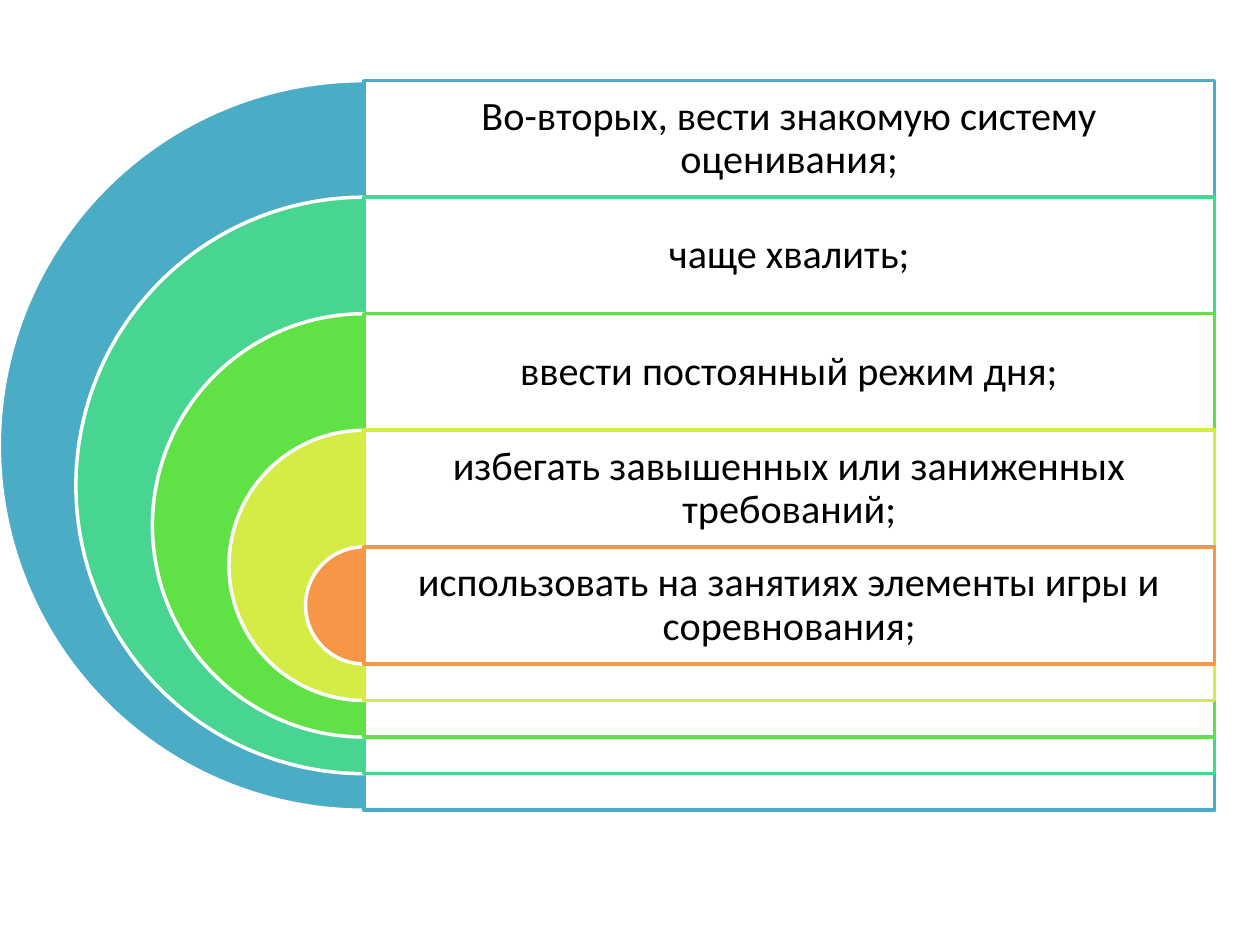
"""Build a slide of nested half discs, each with a framed recommendation."""
from dataclasses import dataclass

from lxml import etree
from pptx import Presentation
from pptx.dml.color import RGBColor
from pptx.enum import shapes, text
from pptx.oxml.ns import qn
from pptx.util import Inches, Pt


@dataclass(frozen=True)
class Theme:
    font: str = "Calibri"
    text_size: float = 23
    line_width: float = 2
    line_spacing: float = 0.9
    text_color: str = "000000"
    paper: str = "FFFFFF"
    frame_alpha: int = 90


@dataclass(frozen=True)
class Layer:
    caption: str
    color: str


@dataclass(frozen=True)
class Box:
    left: float
    top: float
    width: float
    height: float

    def lengths(self) -> tuple:
        return tuple(map(Inches, (self.left, self.top, self.width, self.height)))


THEME = Theme()
LAYERS = (
    Layer("Во-вторых, вести знакомую систему оценивания;", "4BACC6"),
    Layer("чаще хвалить;", "48D491"),
    Layer("ввести постоянный режим дня;", "60E146"),
    Layer("избегать завышенных или заниженных требований;", "D5EC46"),
    Layer("использовать на занятиях элементы игры и соревнования;", "F79646"),
)
CENTER = 2.89
TOP = 0.64
FRAME_WIDTH = 6.75
OUTER_DIAMETER = 5.79
ROW_HEIGHT = 0.93
DIAMETER_STEP = (OUTER_DIAMETER - ROW_HEIGHT) / (len(LAYERS) - 1)


def add_filled_shape(slide, kind, box: Box, fill: str, line: str):
    shape = slide.shapes.add_shape(kind, *box.lengths())
    shape.shadow.inherit = False
    shape.fill.solid()
    shape.fill.fore_color.rgb = RGBColor.from_string(fill)
    shape.line.color.rgb = RGBColor.from_string(line)
    shape.line.width = Pt(THEME.line_width)
    return shape


def add_half_disc(slide, box: Box, color: str) -> None:
    disc = add_filled_shape(slide, shapes.MSO_SHAPE.PIE, box, color, THEME.paper)
    disc.adjustments[0] = 54
    disc.adjustments[1] = 162


def add_frame(slide, box: Box, color: str) -> None:
    frame = add_filled_shape(
        slide, shapes.MSO_SHAPE.RECTANGLE, box, THEME.paper, color
    )
    fill_color = frame.fill._xPr.find(qn("a:solidFill"))[0]
    alpha = etree.SubElement(fill_color, qn("a:alpha"))
    alpha.set("val", str(THEME.frame_alpha * 1000))


def add_caption(slide, box: Box, caption: str) -> None:
    text_frame = slide.shapes.add_textbox(*box.lengths()).text_frame
    text_frame.word_wrap = True
    text_frame.vertical_anchor = text.MSO_ANCHOR.MIDDLE
    for side in ("left", "top", "right", "bottom"):
        setattr(text_frame, f"margin_{side}", Inches(0.1))
    text_frame.text = caption
    paragraph = text_frame.paragraphs[0]
    paragraph.alignment = text.PP_ALIGN.CENTER
    paragraph.line_spacing = THEME.line_spacing
    font = paragraph.runs[0].font
    font.name = THEME.font
    font.size = Pt(THEME.text_size)
    font.color.rgb = RGBColor.from_string(THEME.text_color)


def add_layer(slide, index: int, layer: Layer) -> None:
    top = TOP + index * (CENTER + 0.81) / len(LAYERS) * 1.25
    diameter = OUTER_DIAMETER - index * DIAMETER_STEP
    add_half_disc(
        slide, Box(CENTER - diameter / 2, top, diameter, diameter), layer.color
    )
    add_frame(slide, Box(CENTER, top, FRAME_WIDTH, diameter), layer.color)
    add_caption(slide, Box(CENTER, top, FRAME_WIDTH, ROW_HEIGHT), layer.caption)


def main() -> None:
    presentation = Presentation()
    presentation.slide_width = Inches(10)
    presentation.slide_height = Inches(7.5)
    slide = presentation.slides.add_slide(presentation.slide_layouts[6])
    for index, layer in enumerate(LAYERS):
        add_layer(slide, index, layer)
    presentation.save("out.pptx")


if __name__ == "__main__":
    main()
